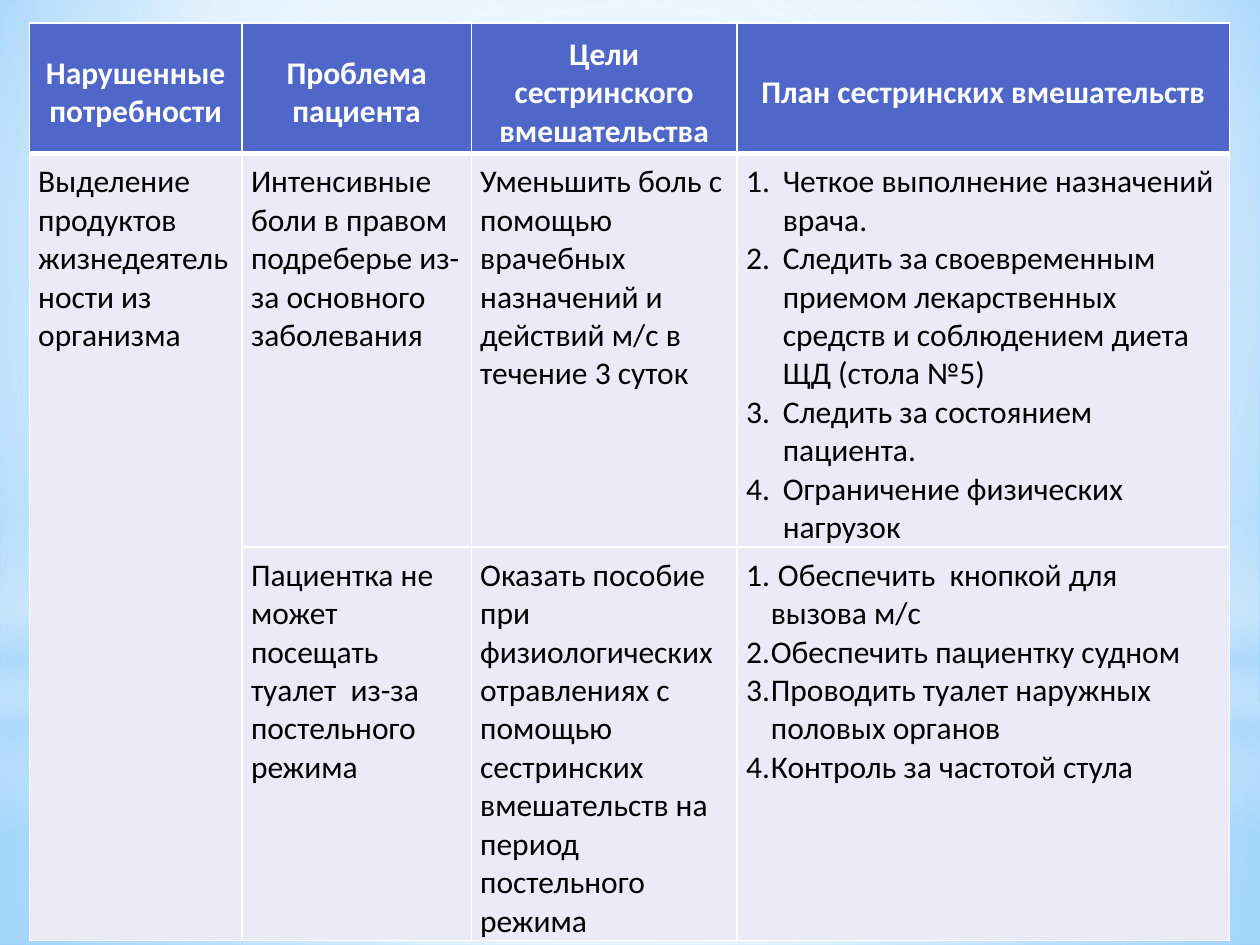
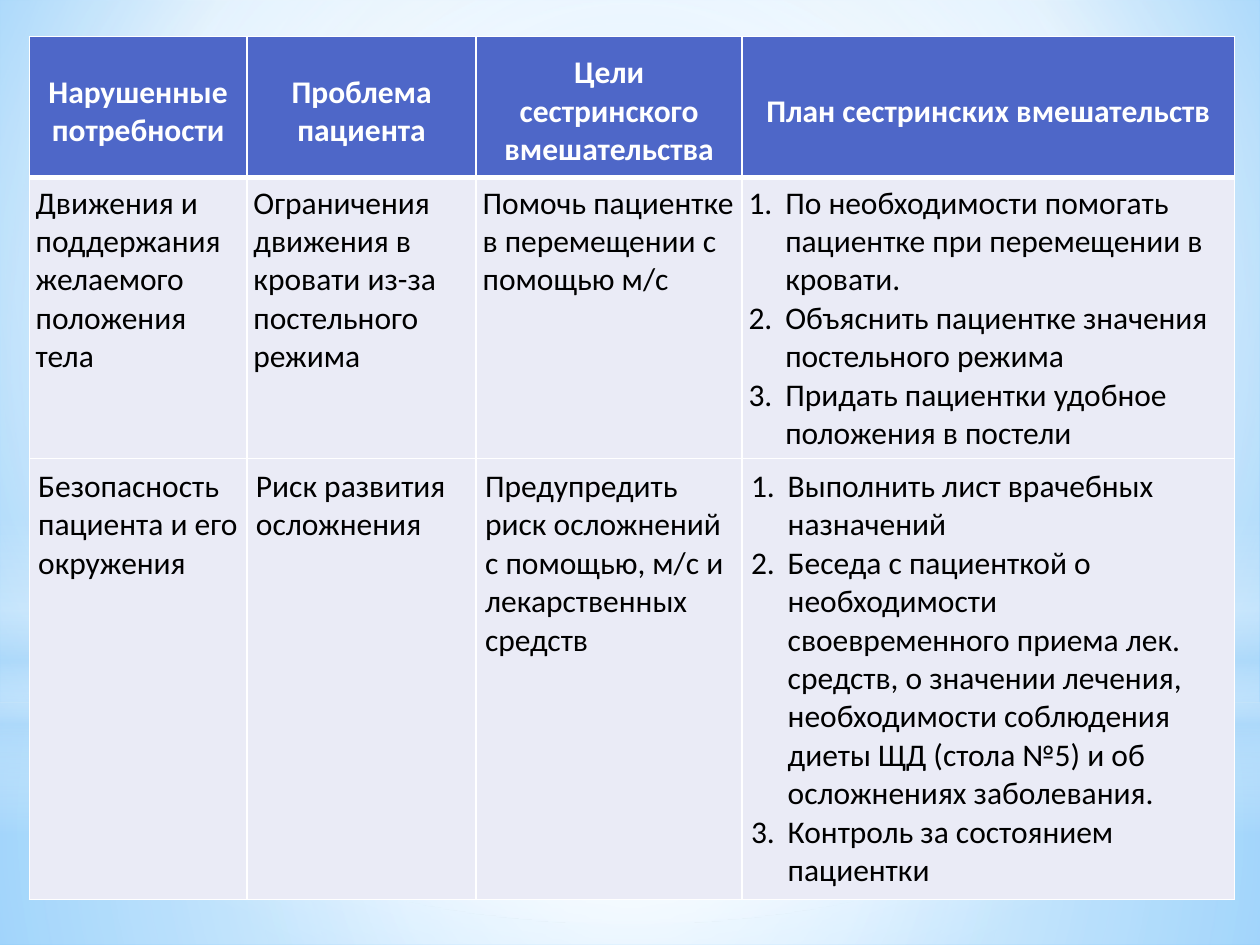
import pptx
import pptx.dml.color
import pptx.enum.shapes
import pptx.enum.text
import pptx.oxml
import pptx.oxml.ns
import pptx.util
from lxml import etree
from pptx.util import Cm

WHITE = "FFFFFF"
PALE_BLUE = "B4DCFA"
HEADER_FILL = "4E67C8"
BODY_FILL = "EAEBF6"
TEXT_COLOR = "000000"
FONT = "Calibri"
CELL_INSET = 0.18
NARROW_INSET = 0.13
LIST_INDENT = 0.74
TIGHT_INDENT = 0.5
CENTER = (50, 50, 50, 50)
HEADERS = [
    "Нарушенные потребности",
    "Проблема пациента",
    "Цели сестринского вмешательства",
    "План сестринских вмешательств",
]


def color(value):
    return pptx.dml.color.RGBColor.from_string(value)


def set_gradient(parent, stops, focus=None):
    stop_xml = "".join(
        f'<a:gs pos="{position * 1000}"><a:srgbClr val="{value}">'
        f'<a:alpha val="{opacity * 1000}"/></a:srgbClr></a:gs>'
        for position, value, opacity in stops
    )
    if focus:
        sides = " ".join(f'{side}="{share * 1000}"' for side, share in zip("ltrb", focus))
        direction = f'<a:path path="circle"><a:fillToRect {sides}/></a:path>'
    else:
        direction = '<a:lin ang="5400000" scaled="0"/>'
    gradient = pptx.oxml.parse_xml(
        f'<a:gradFill {pptx.oxml.ns.nsdecls("a")} rotWithShape="1">'
        f"<a:gsLst>{stop_xml}</a:gsLst>{direction}</a:gradFill>"
    )
    parent.replace(parent.find(pptx.oxml.ns.qn("a:noFill")), gradient)


def add_glow(slide, master, kind, top, height, stops, focus=None):
    shape = slide.shapes.add_shape(kind, 0, Cm(top), Cm(25.4), Cm(height))
    shape.shadow.inherit = False
    shape.line.fill.background()
    shape.fill.background()
    set_gradient(shape.element.spPr, stops, focus)
    master.element.cSld.spTree.append(shape.element)


def decorate_master(master, slide):
    master.background.fill.background()
    background = master.element.find(".//" + pptx.oxml.ns.qn("p:bgPr"))
    set_gradient(background, [(0, "9ED5FF", 100), (60, WHITE, 100), (100, "5BB9FF", 100)],
                 (20, 10, 20, 60))
    rectangle = pptx.enum.shapes.MSO_SHAPE.RECTANGLE
    oval = pptx.enum.shapes.MSO_SHAPE.OVAL
    add_glow(slide, master, rectangle, 14.17, 4.88,
             [(0, WHITE, 91), (37, WHITE, 76), (100, PALE_BLUE, 79)], CENTER)
    add_glow(slide, master, rectangle, 0, 14.17,
             [(0, WHITE, 89), (48, WHITE, 62), (100, PALE_BLUE, 79)], CENTER)
    add_glow(slide, master, rectangle, 10.46, 6.35,
             [(0, WHITE, 0), (29, WHITE, 30), (45, PALE_BLUE, 40),
              (55, WHITE, 26), (65, PALE_BLUE, 60), (100, WHITE, 0)])
    add_glow(slide, master, oval, 4.45, 14.17, [(0, WHITE, 100), (56, WHITE, 0)], CENTER)


def set_borders(cell, top, bottom):
    properties = cell._tc.get_or_add_tcPr()
    widths = {"lnL": 1, "lnR": 1, "lnT": top, "lnB": bottom}
    for index, (tag, width) in enumerate(widths.items()):
        properties.insert(index, pptx.oxml.parse_xml(
            f'<a:{tag} {pptx.oxml.ns.nsdecls("a")} w="{pptx.util.Pt(width)}">'
            f'<a:solidFill><a:srgbClr val="{WHITE}"/></a:solidFill></a:{tag}>'
        ))


def number_paragraph(paragraph, indent):
    properties = paragraph._p.get_or_add_pPr()
    properties.set("marL", str(Cm(indent)))
    properties.set("indent", str(-Cm(indent)))
    numbering = etree.SubElement(properties, pptx.oxml.ns.qn("a:buAutoNum"))
    numbering.set("type", "arabicPeriod")


def fill_cell(cell, content, header, inset, indent):
    cell.margin_left = cell.margin_right = cell.margin_top = Cm(inset)
    cell.margin_bottom = 0
    numbered = isinstance(content, list)
    cell.text = "\n".join(content) if numbered else content
    if header:
        cell.vertical_anchor = pptx.enum.text.MSO_ANCHOR.MIDDLE
    for paragraph in cell.text_frame.paragraphs:
        paragraph.font.name = FONT
        paragraph.font.size = pptx.util.Pt(18)
        paragraph.font.bold = header
        paragraph.font.color.rgb = color(WHITE if header else TEXT_COLOR)
        if header:
            paragraph.alignment = pptx.enum.text.PP_ALIGN.CENTER
        if numbered:
            number_paragraph(paragraph, indent)


def add_care_plan(slide, top, first_width, heights, body, insets, indents):
    widths = [first_width, 4.62, 5.36, 9.93]
    rows = [HEADERS] + body
    table = slide.shapes.add_table(
        len(rows), len(widths), Cm(0.59), Cm(top), Cm(sum(widths)), Cm(sum(heights))
    ).table
    for column, width in zip(table.columns, widths):
        column.width = Cm(width)
    for row_index, contents in enumerate(rows):
        table.rows[row_index].height = Cm(heights[row_index])
        header = row_index == 0
        for column_index, content in enumerate(contents):
            cell = table.cell(row_index, column_index)
            cell.fill.solid()
            cell.fill.fore_color.rgb = color(HEADER_FILL if header else BODY_FILL)
            set_borders(cell, 3 if row_index == 1 else 1, 3 if header else 1)
            if content is None:
                table.cell(row_index - 1, column_index).merge(cell)
            else:
                fill_cell(cell, content, header, insets[row_index], indents[row_index])


def main():
    presentation = pptx.Presentation()
    presentation.slide_width = Cm(25.4)
    presentation.slide_height = Cm(19.05)
    blank_layout = presentation.slide_layouts[6]

    pain_slide = presentation.slides.add_slide(blank_layout)
    decorate_master(presentation.slide_master, pain_slide)
    add_care_plan(pain_slide, 0.46, 4.29, [2.64, 7.62, 7.62], [
        [
            "Выделение продуктов жизнедеятельности из организма",
            "Интенсивные боли в правом подреберье из-за основного заболевания",
            "Уменьшить боль с помощью врачебных назначений и действий м/с в течение 3 суток",
            [
                "Четкое выполнение назначений врача.",
                "Следить за своевременным приемом лекарственных средств "
                "и соблюдением диета ЩД (стола №5)",
                "Следить за состоянием пациента.",
                "Ограничение физических нагрузок",
            ],
        ],
        [
            None,
            "Пациентка не может посещать туалет  из-за постельного режима",
            "Оказать пособие при физиологических отравлениях с помощью "
            "сестринских вмешательств на период постельного режима",
            [
                " Обеспечить  кнопкой для вызова м/с",
                "Обеспечить пациентку судном",
                "Проводить туалет наружных половых органов",
                "Контроль за частотой стула",
            ],
        ],
    ], [CELL_INSET] * 3, [0, LIST_INDENT, TIGHT_INDENT])

    movement_slide = presentation.slides.add_slide(blank_layout)
    add_care_plan(movement_slide, 0.74, 4.39, [2.84, 5.66, 8.89], [
        [
            "Движения и поддержания желаемого положения тела",
            "Ограничения движения в кровати из-за постельного режима",
            "Помочь пациентке в перемещении с помощью м/с",
            [
                "По необходимости помогать пациентке при перемещении в кровати.",
                "Объяснить пациентке значения постельного режима",
                "Придать пациентки удобное положения в постели",
            ],
        ],
        [
            "Безопасность пациента и его окружения",
            "Риск развития осложнения",
            "Предупредить риск осложнений с помощью, м/с и лекарственных средств",
            [
                "Выполнить лист врачебных назначений",
                "Беседа с пациенткой о необходимости своевременного приема лек. средств, "
                "о значении лечения, необходимости соблюдения диеты ЩД (стола №5) "
                "и об осложнениях заболевания.",
                "Контроль за состоянием пациентки",
            ],
        ],
    ], [CELL_INSET, NARROW_INSET, CELL_INSET], [0, LIST_INDENT, LIST_INDENT])

    presentation.save("out.pptx")


if __name__ == "__main__":
    main()
